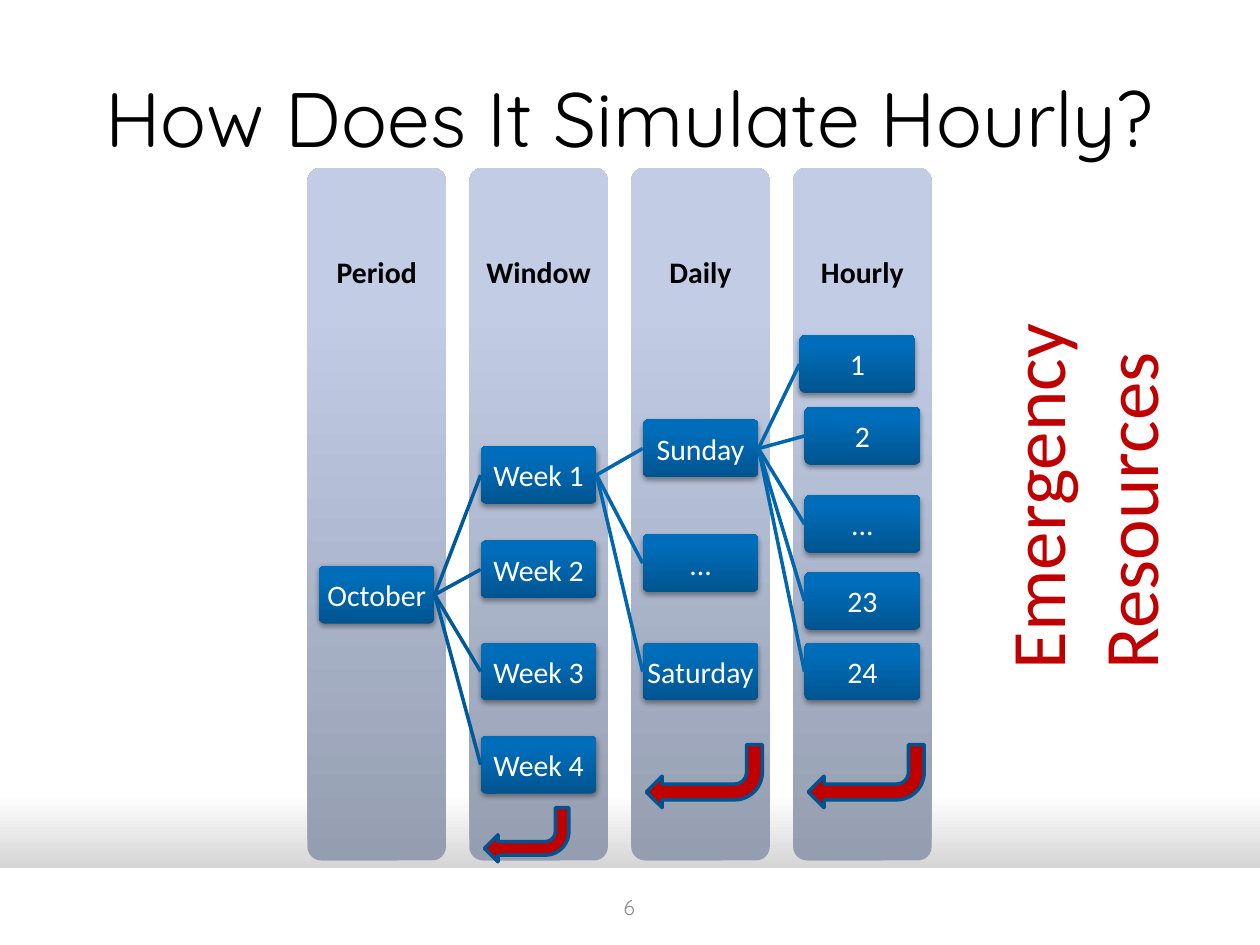
import pptx
import pptx.dml.color
import pptx.enum.shapes
import pptx.enum.text
import pptx.oxml.ns
import pptx.util
from lxml import etree

Inches = pptx.util.Inches
Pt = pptx.util.Pt
RGBColor = pptx.dml.color.RGBColor
MSO_SHAPE = pptx.enum.shapes.MSO_SHAPE
CENTER = pptx.enum.text.PP_ALIGN.CENTER
MIDDLE = pptx.enum.text.MSO_ANCHOR.MIDDLE
qn = pptx.oxml.ns.qn

WHITE = RGBColor(0xFF, 0xFF, 0xFF)
BLACK = RGBColor(0x00, 0x00, 0x00)
GREY = RGBColor(0x8C, 0x8C, 0x8C)
BACKDROP_GREY = RGBColor(0xA6, 0xA6, 0xA6)
COLUMN_DARK = RGBColor(0x95, 0x9E, 0xB1)
COLUMN_LIGHT = RGBColor(0xC2, 0xCD, 0xE5)
NODE_DARK = RGBColor(0x00, 0x54, 0x8F)
NODE_LIGHT = RGBColor(0x00, 0x6D, 0xBA)
WEEK_LINK = RGBColor(0x00, 0x5A, 0x9A)
DAY_LINK = RGBColor(0x00, 0x66, 0xAE)
ARROW_RED = RGBColor(0xC0, 0x00, 0x00)
ARROW_EDGE = RGBColor(0x00, 0x53, 0x8E)

COLUMN_PITCH = 1.285
COLUMN_WIDTH = 1.1
NODE_WIDTH, NODE_HEIGHT = 0.92, 0.46
NODE_INDENT = 0.09
COLUMNS = [
    ("Period", [("October", 4.49)]),
    ("Window", [("Week 1", 3.54), ("Week 2", 4.29), ("Week 3", 5.1), ("Week 4", 5.84)]),
    ("Daily", [("Sunday", 3.33), ("...", 4.24), ("Saturday", 5.1)]),
    ("Hourly", [("1", 2.66), ("2", 3.23), ("...", 3.93), ("23", 4.54), ("24", 5.1)]),
]
NODE_SHIFTS = {"1": -0.04}
LINK_COLORS = [WEEK_LINK, DAY_LINK, DAY_LINK]
RETURN_ARROWS = {1: (6.41, 0.67, 0.43), 2: (5.91, 0.92, 0.5), 3: (5.91, 0.92, 0.5)}


def fill_gradient(fill, angle, stops):
    fill.gradient()
    fill.gradient_angle = angle
    for stop, (position, color) in zip(fill.gradient_stops, stops):
        stop.position = position
        stop.color.rgb = color


def write(box, text, font, size, color, bold=False, align=CENTER, anchor=MIDDLE, inset=None):
    frame = box.text_frame
    frame.word_wrap = True
    frame.vertical_anchor = anchor
    if inset is not None:
        frame.margin_left = frame.margin_right = Inches(inset)
        frame.margin_top = frame.margin_bottom = Inches(inset)
    para = frame.paragraphs[0]
    para.alignment = align
    span = para.add_run()
    span.text = text
    span.font.name = font
    span.font.size = Pt(size)
    span.font.bold = bold
    span.font.color.rgb = color


def add_text(page, left, top, width, height, *text, **style):
    box = page.shapes.add_textbox(Inches(left), Inches(top), Inches(width), Inches(height))
    write(box, *text, **style)
    return box


def add_plain_shape(page, kind, left, top, width, height):
    shape = page.shapes.add_shape(kind, Inches(left), Inches(top), Inches(width), Inches(height))
    shape.shadow.inherit = False
    shape.line.fill.background()
    return shape


def add_rounded_panel(page, left, top, width, height, dark, light):
    panel = add_plain_shape(page, MSO_SHAPE.ROUNDED_RECTANGLE, left, top, width, height)
    panel.adjustments[0] = 0.1
    fill_gradient(panel.fill, 90, [(0, dark), (0.8, light)])
    return panel


def add_drop_shadow(shape):
    effects = shape._element.spPr.find(qn("a:effectLst"))
    shadow = etree.SubElement(effects, qn("a:outerShdw"), blurRad=str(Pt(3.1)),
                              dist=str(Pt(1.6)), dir="5400000", rotWithShape="0")
    color = etree.SubElement(shadow, qn("a:srgbClr"), val="000000")
    etree.SubElement(color, qn("a:alpha"), val="38000")


def add_node(page, left, top, label):
    node = add_rounded_panel(page, left, top, NODE_WIDTH, NODE_HEIGHT, NODE_DARK, NODE_LIGHT)
    add_drop_shadow(node)
    write(node, label, "Calibri", 17, WHITE, inset=0.01)
    return node


def add_link(page, parent, child, color):
    link = page.shapes.add_connector(pptx.enum.shapes.MSO_CONNECTOR.STRAIGHT, 0, 0, 0, 0)
    link.begin_connect(parent, 3)
    link.end_connect(child, 1)
    link.line.color.rgb = color
    link.line.width = Pt(2)
    etree.SubElement(link._element.spPr, qn("a:effectLst"))


def add_return_arrow(page, left, top, width, height):
    arrow = add_plain_shape(page, MSO_SHAPE.BENT_ARROW, left, top, width, height)
    arrow.rotation = 180
    arrow.fill.solid()
    arrow.fill.fore_color.rgb = ARROW_RED
    arrow.line.color.rgb = ARROW_EDGE
    arrow.line.width = Pt(2)


def add_backdrop(page, left, top, width, height):
    fill_gradient(page.background.fill, 270, [(0.84, WHITE), (1, BACKDROP_GREY)])
    footer = add_plain_shape(page, MSO_SHAPE.RECTANGLE, left, top, width, height)
    footer.fill.solid()
    footer.fill.fore_color.rgb = WHITE


def add_hierarchy(page, left, top, height):
    lefts = [left + index * COLUMN_PITCH for index in range(len(COLUMNS))]
    for column_left, (heading, _) in zip(lefts, COLUMNS):
        add_rounded_panel(page, column_left, top, COLUMN_WIDTH, height, COLUMN_DARK, COLUMN_LIGHT)
        add_text(page, column_left, top, COLUMN_WIDTH, 0.3 * height,
                 heading, "Calibri", 17, BLACK, bold=True, inset=0.1)

    levels = [
        [add_node(page, column_left + NODE_INDENT + NODE_SHIFTS.get(label, 0), node_top, label)
         for label, node_top in nodes]
        for column_left, (_, nodes) in zip(lefts, COLUMNS)
    ]
    for parents, children, color in zip(levels, levels[1:], LINK_COLORS):
        for child in children:
            add_link(page, parents[0], child, color)

    for index, (arrow_top, width, arrow_height) in RETURN_ARROWS.items():
        add_return_arrow(page, lefts[index] + 0.12, arrow_top, width, arrow_height)


def add_side_label(page, left, top, width, height):
    label = add_text(page, left, top, width, height, "Emergency Resources", "Calibri", 44,
                     ARROW_RED, align=pptx.enum.text.PP_ALIGN.LEFT,
                     anchor=pptx.enum.text.MSO_ANCHOR.TOP)
    label.rotation = 180
    label.text_frame._txBody.bodyPr.set("vert", "eaVert")


def main():
    deck = pptx.Presentation()
    deck.slide_width = Inches(10)
    deck.slide_height = Inches(7.5)
    page = deck.slides.add_slide(deck.slide_layouts[6])
    add_backdrop(page, 0, 6.89, 10, 0.61)
    add_text(page, 0.5, 0.3, 9, 1.25, "How Does It Simulate Hourly?", "Quicksand", 44, BLACK)
    add_text(page, 3.83, 7, 2.33, 0.4, "6", "Quicksand", 12, GREY)
    add_hierarchy(page, 2.44, 1.33, 5.5)
    add_side_label(page, 7.8, 2.21, 1.68, 3.2)
    deck.save("out.pptx")


if __name__ == "__main__":
    main()
